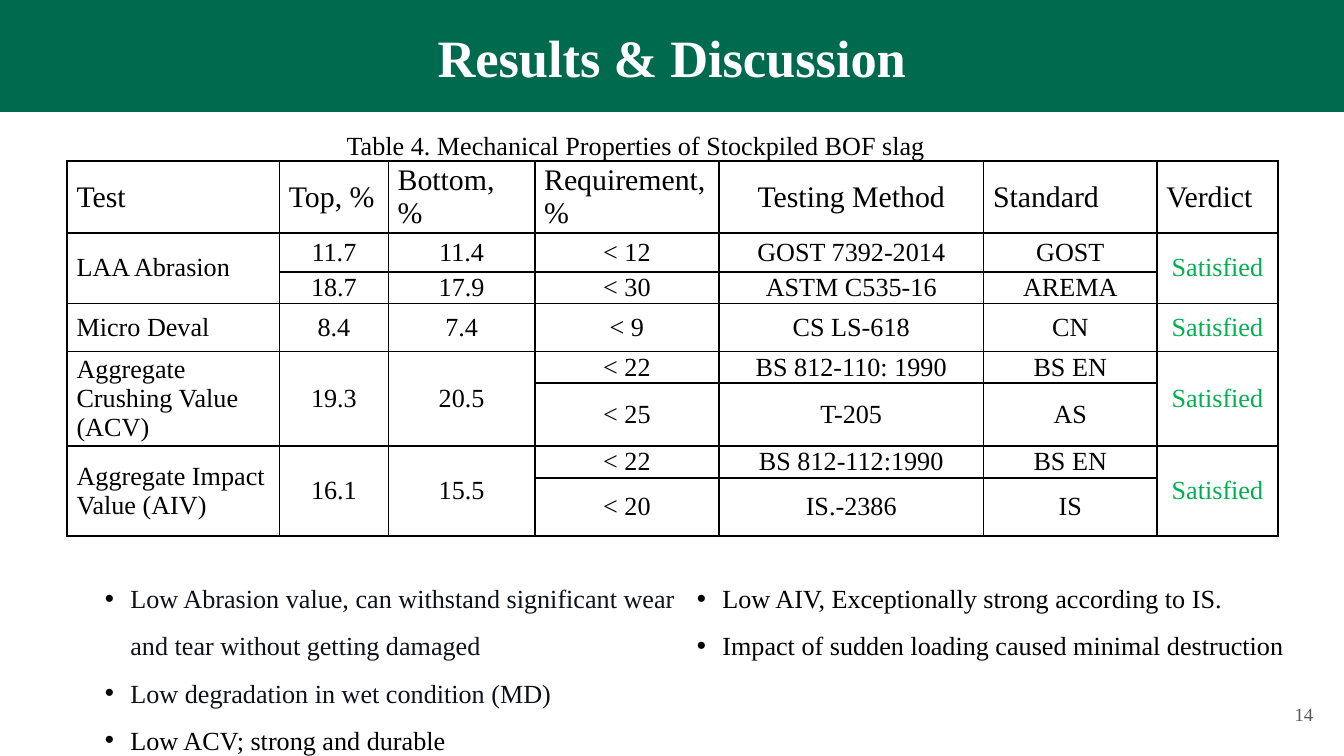
from lxml.etree import SubElement
from pptx import Presentation
from pptx.dml.color import RGBColor
from pptx.enum.shapes import MSO_SHAPE
from pptx.enum.text import MSO_ANCHOR, MSO_AUTO_SIZE, PP_ALIGN
from pptx.oxml.ns import qn
from pptx.util import Inches, Pt

LEFT, CENTER, RIGHT = PP_ALIGN.LEFT, PP_ALIGN.CENTER, PP_ALIGN.RIGHT
TOP, MIDDLE = MSO_ANCHOR.TOP, MSO_ANCHOR.MIDDLE
FIT_SHAPE, NO_FIT = MSO_AUTO_SIZE.SHAPE_TO_FIT_TEXT, MSO_AUTO_SIZE.NONE
RECTANGLE = MSO_SHAPE.RECTANGLE

FONT = "Times New Roman"
COLORS = {
    "green": "006A4E",
    "white": "FFFFFF",
    "black": "000000",
    "ink": "0E101A",
    "gray": "595959",
    "satisfied": "00B050",
}

COLUMN_WIDTHS = [1.58, 0.81, 1.09, 1.37, 1.97, 1.29, 0.9]
ROW_HEIGHTS = [0.53, 0.29, 0.23, 0.36, 0.23, 0.46, 0.24, 0.43]
PASS = "Satisfied"
TESTS = [
    ["Test", "Top, %", "Bottom, %", "Requirement, %", "Testing Method", "Standard", "Verdict"],
    ["LAA Abrasion", "11.7", "11.4", "< 12", "GOST 7392-2014", "GOST", PASS],
    [None, "18.7", "17.9", "< 30", "ASTM C535-16", "AREMA", None],
    ["Micro Deval", "8.4", "7.4", "< 9", "CS LS-618", "CN", PASS],
    ["Aggregate Crushing Value (ACV)", "19.3", "20.5", "< 22", "BS 812-110: 1990", "BS EN", PASS],
    [None, None, None, "< 25", "T-205", "AS", None],
    ["Aggregate Impact Value (AIV)", "16.1", "15.5", "< 22", "BS 812-112:1990", "BS EN", PASS],
    [None, None, None, "< 20", "IS.-2386", "IS", None],
]
FINDINGS = [
    ("Low Abrasion value, can withstand significant wear and tear without getting damaged", "ink"),
    ("Low degradation in wet condition (MD)", "ink"),
    ("Low ACV; strong and durable", "black"),
    ("Low AIV, Exceptionally strong according to IS.", "black"),
    ("Impact of sudden loading caused minimal destruction", "black"),
]


def rgb(name):
    """Return the named colour."""
    return RGBColor.from_string(COLORS[name])


def style_paragraph(paragraph, size, color, align=LEFT, bold=False, spacing=None):
    """Set the font, alignment and spacing of a paragraph."""
    paragraph.alignment = align
    paragraph.space_before = Pt(0)
    if spacing:
        paragraph.line_spacing = spacing
    font = paragraph.font
    font.name, font.size, font.bold = FONT, Pt(size), bold
    font.color.rgb = rgb(color)


def place_text(shape, box, anchor=TOP, auto_size=NO_FIT):
    """Move a text shape to a box and return its prepared text frame."""
    shape.left, shape.top, shape.width, shape.height = map(Inches, box)
    frame = shape.text_frame
    frame.margin_left = frame.margin_right = Inches(0.1)
    frame.margin_top = frame.margin_bottom = Inches(0.1)
    frame.word_wrap = True
    frame.auto_size = auto_size
    frame.vertical_anchor = anchor
    return frame


def add_label(slide, box, text, size, color, align=LEFT, spacing=None, anchor=TOP, auto_size=NO_FIT):
    """Add a one-paragraph text box."""
    label = slide.shapes.add_textbox(*map(Inches, box))
    frame = place_text(label, box, anchor, auto_size)
    frame.text = text
    style_paragraph(frame.paragraphs[0], size, color, align, spacing=spacing)


def add_header(slide, box):
    """Place the title on a coloured band that fills the box."""
    left, top, width, height = box
    band = slide.shapes.add_shape(RECTANGLE, *map(Inches, box))
    band.shadow.inherit = False
    band.fill.solid()
    band.fill.fore_color.rgb = rgb("green")
    band.line.color.rgb = rgb("green")
    band.line.width = Pt(0.75)
    title = slide.shapes.title
    title.element.addprevious(band.element)
    frame = place_text(title, (left, top + 0.09, width, height - 0.21))
    frame.text = "Results & Discussion"
    style_paragraph(frame.paragraphs[0], 28.1, "white", CENTER, bold=True)


def add_borders(cell):
    """Draw a thin black line on the four sides of a cell."""
    properties = cell._tc.get_or_add_tcPr()
    for position, side in enumerate(("lnL", "lnR", "lnT", "lnB")):
        line = SubElement(properties, qn(f"a:{side}"), w=str(Pt(1)))
        properties.insert(position, line)
        fill = SubElement(line, qn("a:solidFill"))
        SubElement(fill, qn("a:srgbClr"), val=COLORS["black"])


def fill_cell(cell, text, row, column):
    """Write and format one cell of the test table."""
    cell.fill.background()
    add_borders(cell)
    cell.vertical_anchor = MIDDLE
    cell.margin_left = cell.margin_right = Inches(0.07)
    cell.margin_top = cell.margin_bottom = 0
    cell.text = text or ""
    is_left = column == 0 or (row == 0 and text != "Testing Method")
    style_paragraph(
        cell.text_frame.paragraphs[0],
        16 if row == 0 else 14,
        "satisfied" if text == PASS else "black",
        LEFT if is_left else CENTER,
    )


def add_test_table(slide, box):
    """Add the table of tests, joining each empty cell to the one above."""
    frame = slide.shapes.add_table(len(TESTS), len(COLUMN_WIDTHS), *map(Inches, box))
    table = frame.table
    table.first_row = table.horz_banding = False
    for column, width in zip(table.columns, COLUMN_WIDTHS):
        column.width = Inches(width)
    for row, height in zip(table.rows, ROW_HEIGHTS):
        row.height = Inches(height)
    for row, values in enumerate(TESTS):
        for column, text in enumerate(values):
            fill_cell(table.cell(row, column), text, row, column)
            if text is None:
                table.cell(row - 1, column).merge(table.cell(row, column))


def add_findings(slide, box):
    """Fill the body placeholder with a bullet list in two columns."""
    frame = place_text(slide.placeholders[1], box)
    columns = frame._txBody.bodyPr
    columns.set("numCol", "2")
    columns.set("spcCol", "0")
    for index, (text, color) in enumerate(FINDINGS):
        paragraph = frame.add_paragraph() if index else frame.paragraphs[0]
        paragraph.text = text
        properties = paragraph._p.get_or_add_pPr()
        properties.set("marL", str(Inches(0.19)))
        properties.set("indent", str(-Inches(0.19)))
        bullet_color = SubElement(properties, qn("a:buClr"))
        SubElement(bullet_color, qn("a:srgbClr"), val=COLORS["black"])
        SubElement(properties, qn("a:buFont"), typeface="Arial")
        SubElement(properties, qn("a:buChar"), char="•")
        style_paragraph(paragraph, 14, color, spacing=1.5)


def main():
    """Build and save the slide."""
    presentation = Presentation()
    presentation.slide_width = Inches(10)
    presentation.slide_height = Inches(10 * 9 / 16)
    slide = presentation.slides.add_slide(presentation.slide_layouts[1])
    add_header(slide, (0, 0, 10, 0.83))
    add_label(slide, (9.27, 5.1, 0.6, 0.43), "14", 10, "gray", RIGHT, anchor=MIDDLE)
    add_label(slide, (2.48, 0.83, 4.92, 0.74), "Table 4. Mechanical Properties of Stockpiled BOF slag",
              14, "black", spacing=1.15, auto_size=FIT_SHAPE)
    add_findings(slide, (0.68, 4.12, 9.01, 1.62))
    add_test_table(slide, (0.5, 1.2, 9.01, 2.79))
    presentation.save("out.pptx")


if __name__ == "__main__":
    main()
